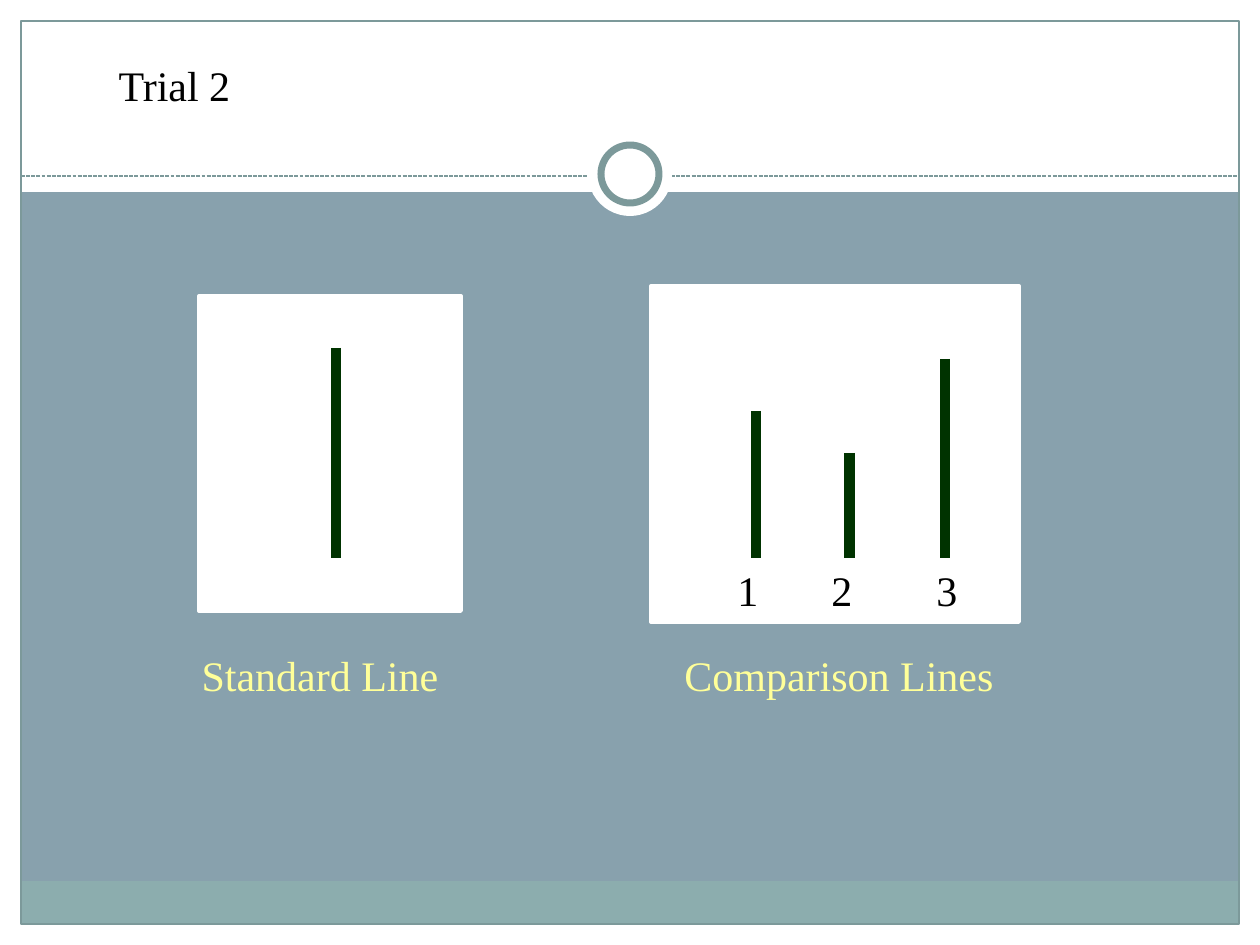
from dataclasses import dataclass
from lxml.etree import SubElement
from pptx import Presentation
from pptx.dml.color import RGBColor
from pptx.enum.dml import MSO_LINE
from pptx.enum.shapes import MSO_CONNECTOR, MSO_SHAPE
from pptx.enum.text import MSO_ANCHOR, MSO_AUTO_SIZE, PP_ALIGN
from pptx.oxml.ns import qn
from pptx.util import Pt


@dataclass(frozen=True)
class Theme:
    background: str = "88A1AD"
    paper: str = "FFFFFF"
    band: str = "8CADAE"
    frame: str = "7C999A"
    bar: str = "003300"
    caption: str = "FFFF99"
    ink: str = "000000"
    font: str = "Times New Roman"
    text_size: float = 24
    thin: float = 0.75
    card_border: float = 2.25
    ring: float = 4
    bar_width: float = 6.25


THEME = Theme()
SCALE = 914400 / 126
WIDTH, HEIGHT, MARGIN = 1260, 945, 21
HEADER_HEIGHT, DIVIDER_Y = 192, 176
BAR_BASE = 558

TITLE = ("Trial 2", (105, 53, 139, 63))
CAPTIONS = [
    ("Standard Line", (189, 643, 262, 63)),
    ("Comparison Lines", (672, 643, 334, 63)),
]
CARDS = [(651, 286, 368, 336), (199, 296, 262, 315)]
BARS = [(336, 210), (756, 147), (850, 105), (945, 199)]
BAR_LABELS = ["1", "2", "3"]
LABEL_BOX = (725, 558, 294, 63)
LABEL_TABS = [94, 199]


def px(value):
    return round(value * SCALE)


def color(value):
    return RGBColor.from_string(value)


def add_block(slide, kind, box, fill=None, line=None, width=THEME.thin):
    shape = slide.shapes.add_shape(kind, *map(px, box))
    shape.shadow.inherit = False
    if fill:
        shape.fill.solid()
        shape.fill.fore_color.rgb = color(fill)
    else:
        shape.fill.background()
    if line:
        shape.line.color.rgb = color(line)
        shape.line.width = Pt(width)
    else:
        shape.line.fill.background()


def add_line(slide, start, end, line, width):
    connector = slide.shapes.add_connector(
        MSO_CONNECTOR.STRAIGHT, *map(px, (*start, *end)))
    connector.line.color.rgb = color(line)
    connector.line.width = Pt(width)
    SubElement(connector._element.spPr, qn("a:effectLst"))
    return connector


def write_text(shape, text, text_color, alignment):
    frame = shape.text_frame
    frame.text = text
    frame.word_wrap = False
    frame.auto_size = MSO_AUTO_SIZE.NONE
    frame.vertical_anchor = MSO_ANCHOR.MIDDLE
    paragraph = frame.paragraphs[0]
    paragraph.alignment = alignment
    for run in paragraph.runs:
        run.font.name = THEME.font
        run.font.size = Pt(THEME.text_size)
        run.font.color.rgb = color(text_color)
    return paragraph


def add_text(slide, text, box, text_color, alignment=PP_ALIGN.CENTER):
    shape = slide.shapes.add_textbox(*map(px, box))
    return write_text(shape, text, text_color, alignment)


def add_backdrop(slide):
    slide.background.fill.solid()
    slide.background.fill.fore_color.rgb = color(THEME.background)
    inner_width, bottom = WIDTH - 2 * MARGIN, HEIGHT - MARGIN
    for box, fill in [
        ((0, bottom, WIDTH, MARGIN), THEME.paper),
        ((0, 0, WIDTH, HEADER_HEIGHT), THEME.paper),
        ((0, 0, MARGIN, HEIGHT), THEME.paper),
        ((WIDTH - MARGIN, 0, MARGIN, HEIGHT), THEME.paper),
        ((MARGIN, 881, inner_width, bottom - 881), THEME.band),
    ]:
        add_block(slide, MSO_SHAPE.RECTANGLE, box, fill)
    add_block(slide, MSO_SHAPE.RECTANGLE,
              (MARGIN, MARGIN, inner_width, HEIGHT - 2 * MARGIN), line=THEME.frame)
    divider = add_line(slide, (MARGIN, DIVIDER_Y), (WIDTH - MARGIN, DIVIDER_Y),
                       THEME.frame, THEME.thin)
    divider.line.dash_style = MSO_LINE.SQUARE_DOT
    for diameter, line in [(84, None), (58, THEME.frame)]:
        box = ((WIDTH - diameter) / 2, 174 - diameter / 2, diameter, diameter)
        add_block(slide, MSO_SHAPE.OVAL, box, THEME.paper, line, THEME.ring)


def add_title(slide):
    text, box = TITLE
    title = slide.shapes.title
    title.left, title.top, title.width, title.height = map(px, box)
    write_text(title, text, THEME.ink, PP_ALIGN.CENTER)
    slide.shapes._spTree.append(title._element)


def add_trial(slide):
    for box in CARDS:
        add_block(slide, MSO_SHAPE.RECTANGLE, box,
                  THEME.paper, THEME.paper, THEME.card_border)
    for x, length in BARS:
        add_line(slide, (x, BAR_BASE - length), (x, BAR_BASE),
                 THEME.bar, THEME.bar_width)
    labels = add_text(slide, "\t".join(BAR_LABELS), LABEL_BOX,
                      THEME.ink, PP_ALIGN.LEFT)
    tab_list = SubElement(labels._p.get_or_add_pPr(), qn("a:tabLst"))
    for position in LABEL_TABS:
        SubElement(tab_list, qn("a:tab"), pos=str(px(position)), algn="l")
    for text, box in CAPTIONS:
        add_text(slide, text, box, THEME.caption)


def main():
    presentation = Presentation()
    presentation.slide_width, presentation.slide_height = px(WIDTH), px(HEIGHT)
    slide = presentation.slides.add_slide(presentation.slide_layouts[5])
    add_backdrop(slide)
    add_trial(slide)
    add_title(slide)
    presentation.save("out.pptx")


if __name__ == "__main__":
    main()
